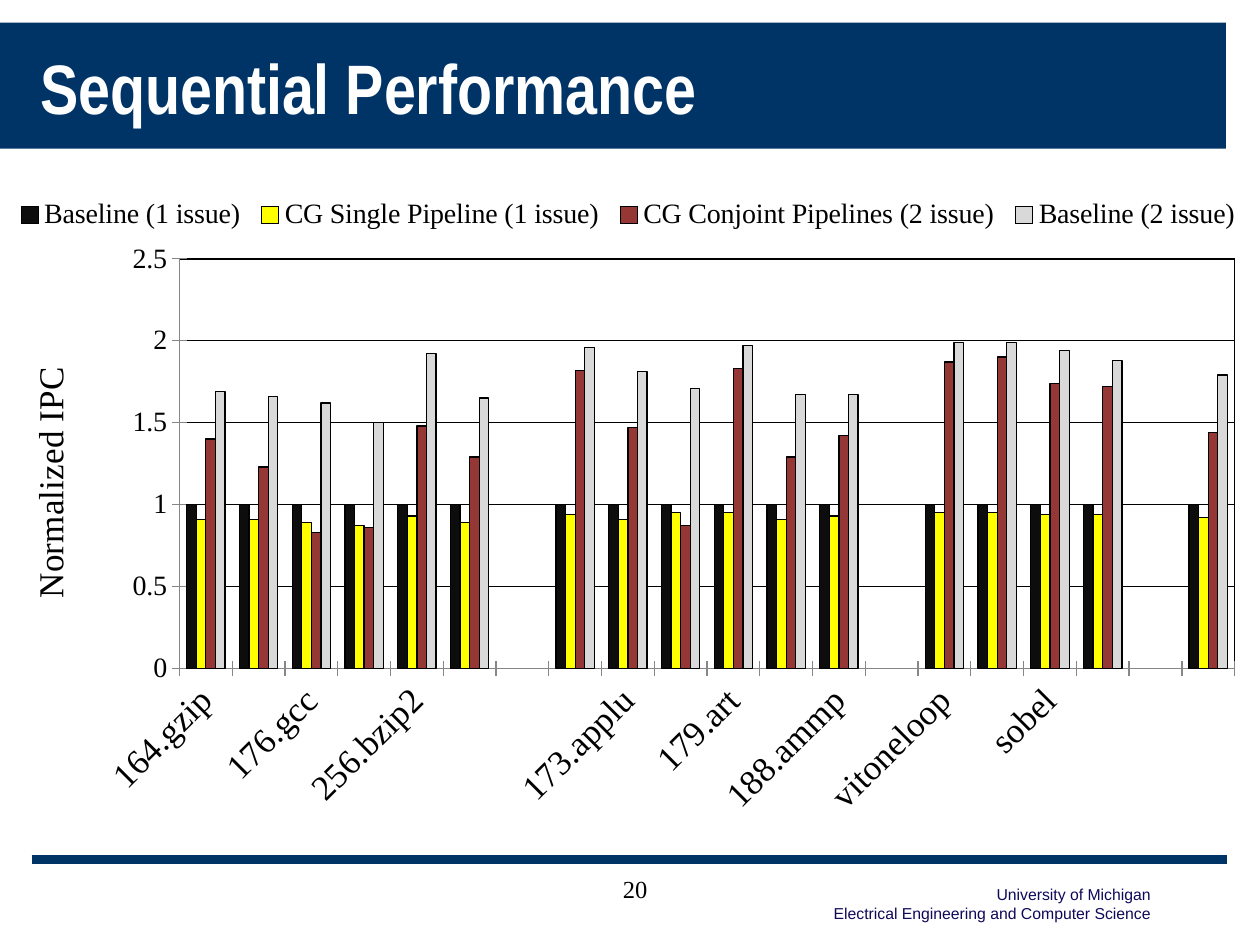
from lxml import etree
from pptx import Presentation
from pptx.chart.data import CategoryChartData
from pptx.dml.color import RGBColor
from pptx.enum.chart import XL_CHART_TYPE, XL_LEGEND_POSITION, XL_TICK_MARK
from pptx.enum.shapes import MSO_CONNECTOR, MSO_SHAPE
from pptx.enum.text import MSO_ANCHOR, PP_ALIGN
from pptx.oxml import parse_xml
from pptx.oxml.ns import nsdecls, qn
from pptx.util import Inches, Pt


def color(value):
    return RGBColor.from_string(value)


def place(element, index, **fractions):
    for old in element.findall(qn("c:layout")):
        element.remove(old)
    values = "".join(f'<c:{name} val="{value}"/>' for name, value in fractions.items())
    target = '<c:layoutTarget val="inner"/>' if element.tag == qn("c:plotArea") else ""
    modes = '<c:xMode val="edge"/><c:yMode val="edge"/>'
    element.insert(index, parse_xml(
        f'<c:layout {nsdecls("c")}><c:manualLayout>{target}{modes}{values}</c:manualLayout></c:layout>'))


presentation = Presentation()
presentation.slide_width = Inches(10)
presentation.slide_height = Inches(7.5)
slide = presentation.slides.add_slide(presentation.slide_layouts[6])

banner = slide.shapes.add_shape(
    MSO_SHAPE.RECTANGLE, Inches(-0.01), Inches(0.18), Inches(9.74), Inches(1))
banner.shadow.inherit = False
banner.fill.solid()
banner.fill.fore_color.rgb = color("003366")
banner.line.fill.background()

footer_rule = slide.shapes.add_connector(
    MSO_CONNECTOR.STRAIGHT, Inches(0.25), Inches(6.82), Inches(9.74), Inches(6.82))
footer_rule.line.color.rgb = color("003366")
footer_rule.line.width = Pt(5)
etree.SubElement(footer_rule._element.spPr, qn("a:effectLst"))

texts = [
    (["Sequential Performance"], 0.22, 0.2, 8.5, 0.97, "Arial Narrow", 40, "FFFFFF", PP_ALIGN.LEFT, MSO_ANCHOR.MIDDLE),
    (["20"], 4, 6.89, 2.08, 0.5, "Times New Roman", 14, "000000", PP_ALIGN.CENTER, MSO_ANCHOR.TOP),
    (["University of Michigan", "Electrical Engineering and Computer Science"],
     6.51, 6.97, 2.72, 0.4, "Arial", 9, "0F0958", PP_ALIGN.RIGHT, MSO_ANCHOR.TOP),
]
for lines, left, top, width, height, font_name, size, text_color, alignment, anchor in texts:
    box = slide.shapes.add_textbox(Inches(left), Inches(top), Inches(width), Inches(height))
    frame = box.text_frame
    frame.word_wrap = True
    frame.vertical_anchor = anchor
    frame.text = "\n".join(lines)
    for paragraph in frame.paragraphs:
        paragraph.alignment = alignment
        paragraph.font.name = font_name
        paragraph.font.size = Pt(size)
        paragraph.font.bold = size == 40
        paragraph.font.color.rgb = color(text_color)

series_data = [
    ("Baseline (1 issue)", "0D0D0D",
     [1, 1, 1, 1, 1, 1, None, 1, 1, 1, 1, 1, 1, None, 1, 1, 1, 1, None, 1]),
    ("CG Single Pipeline (1 issue)", "FFFF00",
     [0.91, 0.91, 0.89, 0.87, 0.93, 0.89, None, 0.94, 0.91, 0.95, 0.95, 0.91, 0.93, None,
      0.95, 0.95, 0.94, 0.94, None, 0.92]),
    ("CG Conjoint Pipelines (2 issue)", "953735",
     [1.4, 1.23, 0.83, 0.86, 1.48, 1.29, None, 1.82, 1.47, 0.87, 1.83, 1.29, 1.42, None,
      1.87, 1.9, 1.74, 1.72, None, 1.44]),
    ("Baseline (2 issue)", "D9D9D9",
     [1.69, 1.66, 1.62, 1.5, 1.92, 1.65, None, 1.96, 1.81, 1.71, 1.97, 1.67, 1.67, None,
      1.99, 1.99, 1.94, 1.88, None, 1.79]),
]
chart_data = CategoryChartData()
chart_data.categories = [
    "164.gzip", "175.vpr", "176.gcc", "197.parser", "256.bzip2", "300.twolf", "",
    "172.mgrid", "173.applu", "177.mesa", "179.art", "183.equake", "188.ammp", "",
    "vitoneloop", "rls", "sobel", "heat", "", "Average"]
for name, fill, values in series_data:
    chart_data.add_series(name, values)
chart = slide.shapes.add_chart(
    XL_CHART_TYPE.COLUMN_CLUSTERED, Inches(-0.03), Inches(1.42), Inches(10.03), Inches(5.16),
    chart_data).chart
chart.has_title = False
chart.font.name = "Times New Roman"
chart.font.size = Pt(14)
chart.font.color.rgb = color("000000")

plot = chart.plots[0]
plot.vary_by_categories = False
plot.gap_width = 150
plot.overlap = 0
for series, (name, fill, values) in zip(plot.series, series_data):
    series.format.fill.solid()
    series.format.fill.fore_color.rgb = color(fill)
    series.format.line.color.rgb = color("000000")
    series.format.line.width = Pt(0.75)

chart.has_legend = True
chart.legend.position = XL_LEGEND_POSITION.TOP
chart.legend.include_in_layout = False
chart.legend.font.size = Pt(16)

category_axis = chart.category_axis
value_axis = chart.value_axis
for axis, size in ((category_axis, 20), (value_axis, 16)):
    axis.major_tick_mark = XL_TICK_MARK.CROSS
    axis.tick_labels.font.size = Pt(size)
    axis.format.line.color.rgb = color("868686")
    axis.format.line.width = Pt(0.75)
category_axis._element.find(qn("c:txPr")).find(qn("a:bodyPr")).set("rot", "-2700000")

value_axis.minimum_scale = 0
value_axis.maximum_scale = 2.5
value_axis.major_unit = 0.5
value_axis.major_gridlines.format.line.color.rgb = color("000000")
value_axis.major_gridlines.format.line.width = Pt(0.75)
value_axis.axis_title.text_frame.text = "Normalized IPC"
title_font = value_axis.axis_title.text_frame.paragraphs[0].font
title_font.size = Pt(20)
title_font.bold = False
title_font.name = "Times New Roman"
title_font.color.rgb = color("000000")

plot_area = chart._chartSpace.chart.plotArea
place(plot_area, 0, x=0.145, y=0.123, w=0.835, h=0.63)
place(chart.legend._element, 1, x=0.01, y=0.02, w=0.98, h=0.07)
place(value_axis.axis_title._element, 1, x=0.02, y=0.28)
plot_area.append(parse_xml(
    f'<c:spPr {nsdecls("c", "a")}><a:solidFill><a:srgbClr val="FFFFFF"/></a:solidFill>'
    '<a:ln w="9525"><a:solidFill><a:srgbClr val="000000"/></a:solidFill></a:ln></c:spPr>'))

presentation.save("out.pptx")
